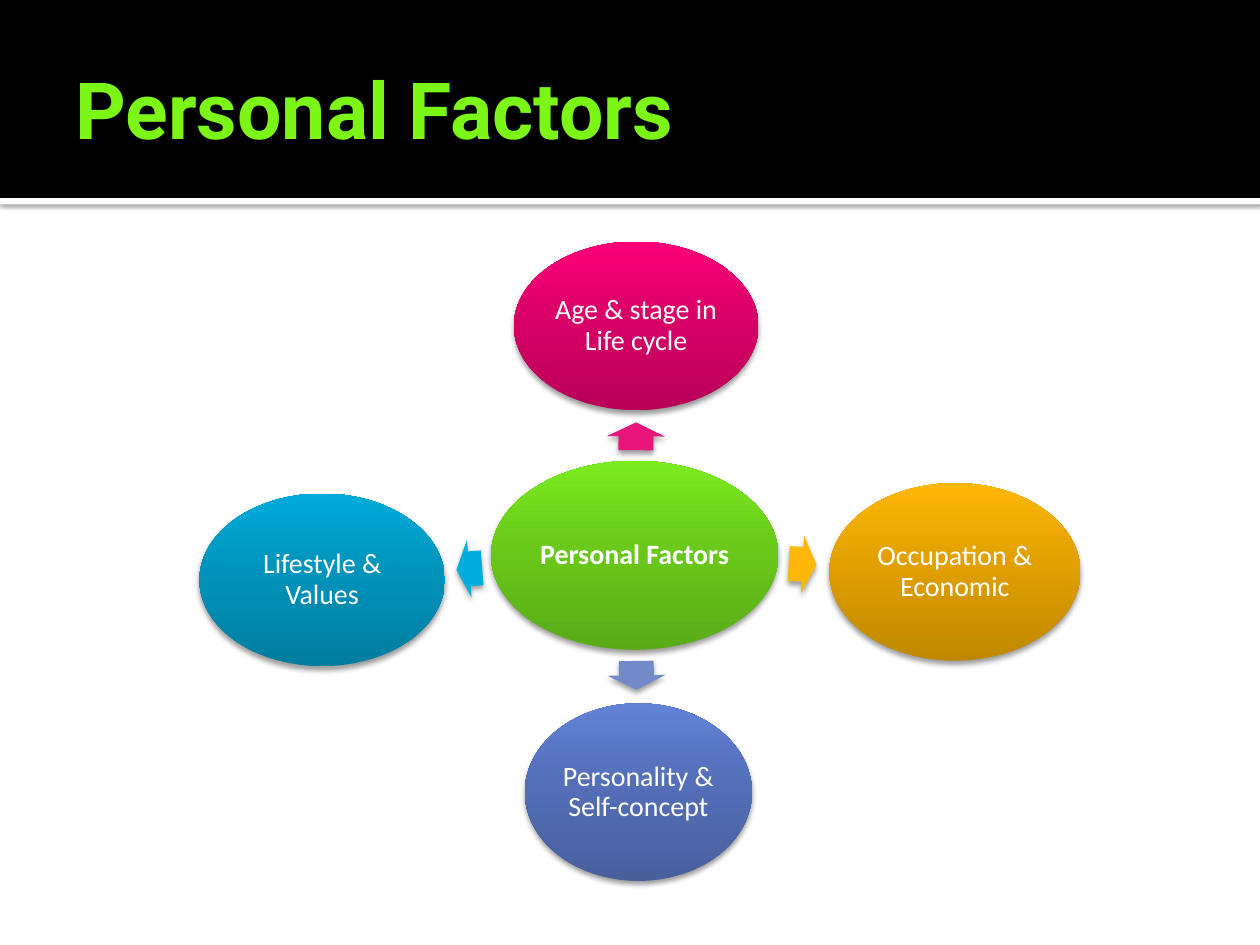
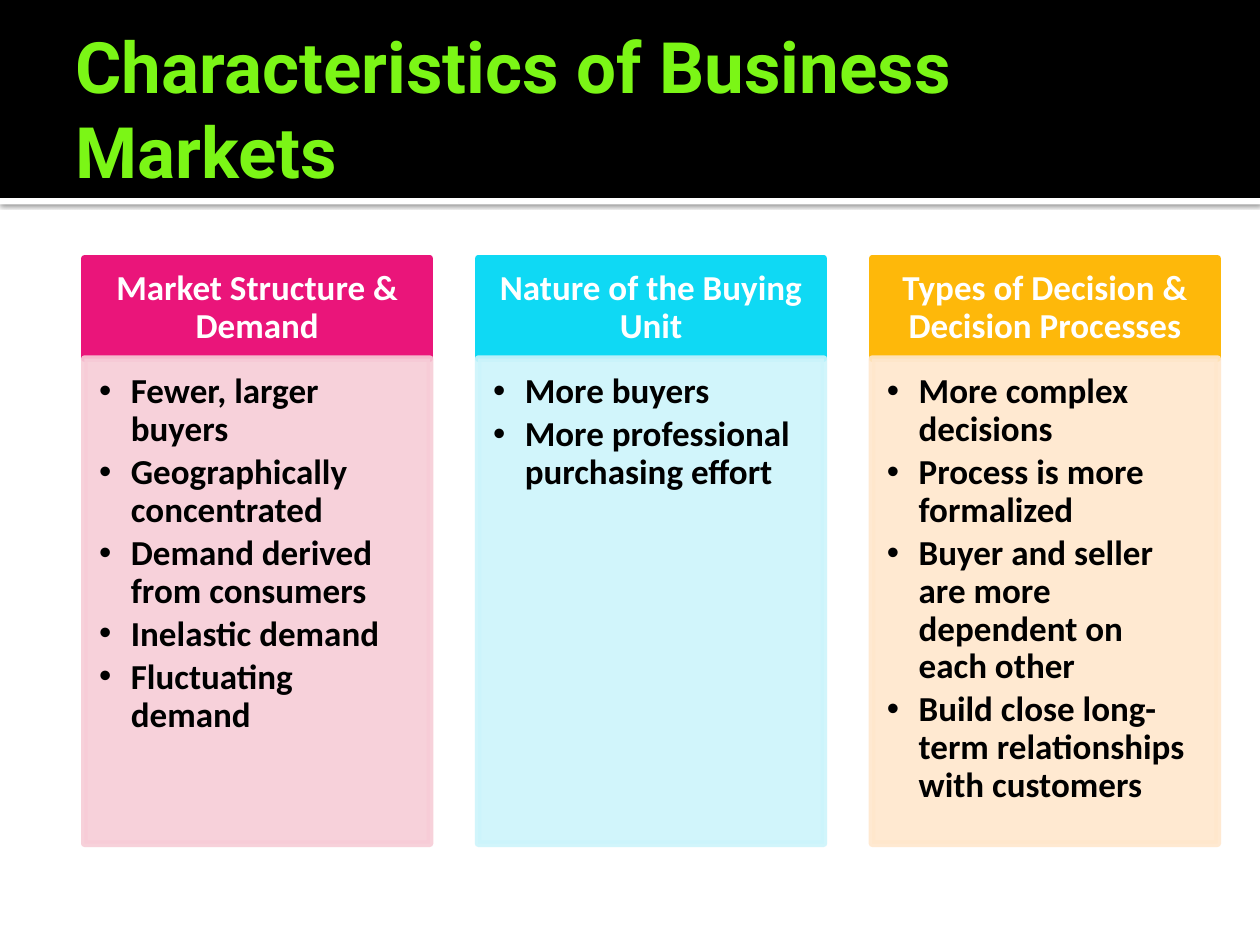
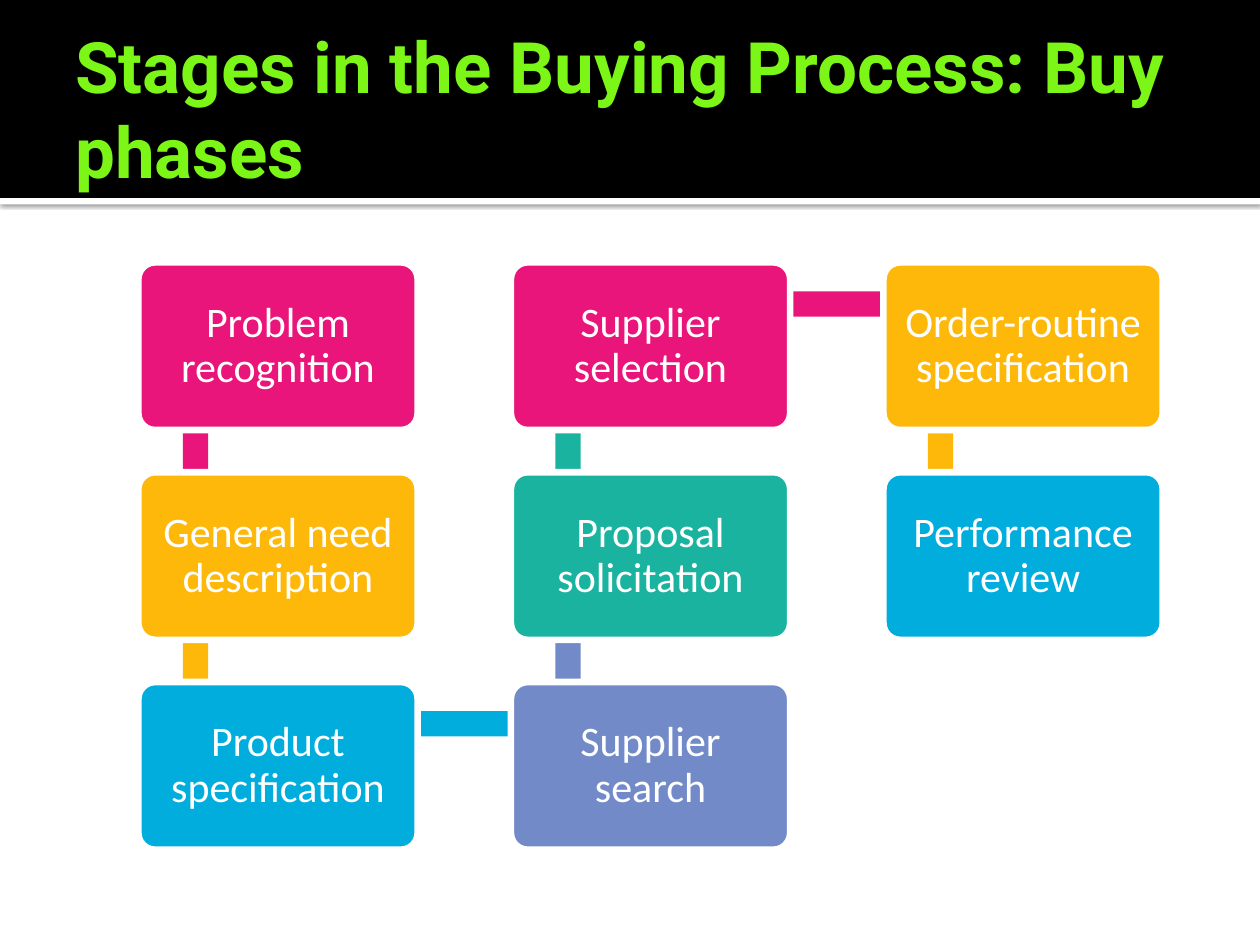
import math
from dataclasses import dataclass

import pptx
import pptx.dml.color
import pptx.enum.shapes
import pptx.enum.text
import pptx.oxml
import pptx.oxml.ns
import pptx.util
from lxml import etree

Cm = pptx.util.Cm
Pt = pptx.util.Pt
qn = pptx.oxml.ns.qn
Kind = pptx.enum.shapes.MSO_SHAPE
Align = pptx.enum.text.PP_ALIGN
Anchor = pptx.enum.text.MSO_ANCHOR


@dataclass(frozen=True)
class Theme:
    black: str = "000000"
    white: str = "FFFFFF"
    lime: str = "7BF616"
    pink: str = "EA157A"
    amber: str = "FEB80A"
    blue: str = "00ADDC"
    indigo: str = "738AC8"
    teal: str = "1AB39F"
    cyan: str = "0FD9F4"
    pale_pink: str = "F7CCD7"
    pale_cyan: str = "CCF4FB"
    pale_amber: str = "FFE7CC"
    # Gradient stops from bottom to top
    green_shades: tuple = ("5AAB17", "6AC91B", "7BEB1F")
    pink_shades: tuple = ("B80057", "D90067", "FD0078")
    amber_shades: tuple = ("BF8800", "E1A000", "FFB807")
    blue_shades: tuple = ("007D9F", "0093BB", "00ABDA")
    indigo_shades: tuple = ("485F9C", "546FB8", "6282D6")
    # Shadows: opacity in percent, blur and distance in points
    band_shadow: tuple = (60, 2.5, 0.8)
    soft_shadow: tuple = (38, 3.1, 2)
    title_font: str = "Roboto"
    body_font: str = "Calibri"
    title_size: float = 45
    long_title_size: float = 40.5
    bubble_size: float = 16
    column_size: float = 20
    card_size: float = 24
    outline: float = 3.78


def rgb(value):
    return pptx.dml.color.RGBColor.from_string(value)


class SlideWriter:
    def __init__(self, deck, theme):
        self.deck = deck
        self.theme = theme
        self.slide = None

    def new_slide(self, title, size):
        """Start a slide with the shared band and title."""
        theme = self.theme
        self.slide = self.deck.slides.add_slide(self.deck.slide_layouts[6])
        self.shape(Kind.RECTANGLE, (0, 3.99, 25.4, 0.13), theme.white,
                   shadow=theme.band_shadow)
        self.shape(Kind.RECTANGLE, (0, 0, 25.4, 3.99), theme.black)
        box = self.slide.shapes.add_textbox(*map(Cm, (1.27, 0.43, 22.86, 3.48)))
        self.text(box, [title], size, theme.lime, bold=True, font=theme.title_font,
                  align=Align.LEFT, insets=(0.25, 0.13, 0.13, 0.13), spacing=1)

    def shape(self, kind, place, fill, line=None, shadow=None, opacity=None,
              rotation=0, adjustments=()):
        shape = self.slide.shapes.add_shape(kind, *map(Cm, place))
        shape.rotation = rotation
        for index, value in enumerate(adjustments):
            shape.adjustments[index] = value
        if isinstance(fill, tuple):
            self.gradient(shape, fill)
        else:
            shape.fill.solid()
            shape.fill.fore_color.rgb = rgb(fill)
        if line:
            shape.line.color.rgb = rgb(line)
            shape.line.width = Pt(self.theme.outline)
        else:
            shape.line.fill.background()
        if opacity:
            for color in shape.element.spPr.iter(qn("a:srgbClr")):
                etree.SubElement(color, qn("a:alpha"), val=str(opacity * 1000))
        shape.shadow.inherit = False
        if shadow:
            self.cast_shadow(shape, *shadow)
        return shape

    def gradient(self, shape, shades):
        shape.fill.gradient()
        shape.fill.gradient_angle = 90
        stops = shape.element.spPr.find(".//" + qn("a:gsLst"))
        stops.clear()
        for position, shade in zip((0, 55, 100), shades):
            stop = etree.SubElement(stops, qn("a:gs"), pos=str(position * 1000))
            etree.SubElement(stop, qn("a:srgbClr"), val=shade)

    def cast_shadow(self, shape, opacity, blur, distance):
        effects = shape.element.spPr.find(qn("a:effectLst"))
        outer = etree.SubElement(
            effects, qn("a:outerShdw"), blurRad=str(int(Pt(blur))),
            dist=str(int(Pt(distance))), dir="5400000", rotWithShape="0")
        color = etree.SubElement(outer, qn("a:srgbClr"), val=self.theme.black)
        etree.SubElement(color, qn("a:alpha"), val=str(opacity * 1000))

    def text(self, box, lines, size, color, bold=False, font=None,
             align=Align.CENTER, anchor=Anchor.MIDDLE, insets=(0.05,) * 4,
             spacing=0.9, bullets=False):
        frame = box.text_frame
        frame.word_wrap = True
        frame.vertical_anchor = anchor
        (frame.margin_left, frame.margin_top,
         frame.margin_right, frame.margin_bottom) = map(Cm, insets)
        for index, line in enumerate(lines):
            para = frame.add_paragraph() if index else frame.paragraphs[0]
            para.alignment = align
            para.line_spacing = spacing
            if bullets:
                self.bullet(para)
            span = para.add_run()
            span.text = line
            span.font.name = font or self.theme.body_font
            span.font.size = Pt(size)
            span.font.bold = bold
            span.font.color.rgb = rgb(color)

    def bullet(self, para):
        para.space_after = Pt(3)
        indent = int(Cm(0.64))
        properties = para._p.get_or_add_pPr()
        properties.set("marL", str(indent))
        properties.set("indent", str(-indent))
        etree.SubElement(properties, qn("a:buFont"), typeface="Arial")
        etree.SubElement(properties, qn("a:buChar"), char="•")

    def bubble(self, label, place, shades, bold=False):
        bubble = self.shape(Kind.OVAL, place, shades, shadow=self.theme.soft_shadow)
        self.text(bubble, [label], self.theme.bubble_size, self.theme.white, bold)

    def arrow(self, place, color, rotation):
        self.shape(Kind.RIGHT_ARROW, place, color, shadow=self.theme.soft_shadow,
                   rotation=rotation, adjustments=(0.6, 0.5))

    def column(self, left, heading, items, color, pale):
        theme = self.theme
        width = 6.97
        header = self.shape(Kind.RECTANGLE, (left, 5.21, width, 2.02), color, line=color)
        self.text(header, [heading], theme.column_size, theme.white, bold=True,
                  insets=(0.4, 0.23, 0.4, 0.23))
        body = self.shape(Kind.RECTANGLE, (left, 7.23, width, 9.78), pale,
                          line=pale, opacity=90)
        self.text(body, items, theme.column_size, theme.black, bold=True,
                  align=Align.LEFT, anchor=Anchor.TOP,
                  insets=(0.3, 0.3, 0.4, 0.43), bullets=True)

    def link(self, start, end, color):
        """Draw a bar from one point to another."""
        thickness = 0.51
        (x1, y1), (x2, y2) = start, end
        length = math.hypot(x2 - x1, y2 - y1)
        angle = math.degrees(math.atan2(y2 - y1, x2 - x1)) % 360
        left, top = (x1 + x2 - length) / 2, (y1 + y2 - thickness) / 2
        self.shape(Kind.RECTANGLE, (left, top, length, thickness), color, rotation=angle)

    def card(self, label, left, top, color):
        card = self.shape(Kind.ROUNDED_RECTANGLE, (left, top, 5.63, 3.38), color,
                          line=self.theme.white, adjustments=(0.1,))
        self.text(card, [label], self.theme.card_size, self.theme.white,
                  insets=(0.25,) * 4)


def personal_factors(writer):
    theme = writer.theme
    writer.new_slide("Personal Factors", theme.title_size)
    writer.bubble("Personal Factors", (9.9, 9.29, 5.79, 3.81), theme.green_shades, bold=True)

    # Each factor: label, bubble place, shades, arrow place, arrow colour, angle
    factors = [
        ("Age & stage in Life cycle", (10.36, 4.87, 4.93, 3.4), theme.pink_shades,
         (12.54, 8.21, 0.56, 1.17), theme.pink, 270.5),
        ("Occupation & Economic", (16.72, 9.74, 5.06, 3.58), theme.amber_shades,
         (15.9, 10.79, 0.56, 1.17), theme.amber, 3),
        ("Lifestyle & Values", (4.02, 9.95, 4.95, 3.48), theme.blue_shades,
         (9.2, 10.88, 0.52, 1.17), theme.blue, 175.5),
        ("Personality & Self-concept", (10.58, 14.18, 4.58, 3.58), theme.indigo_shades,
         (12.54, 13.03, 0.58, 1.17), theme.indigo, 89.1),
    ]
    for label, place, shades, arrow_place, color, angle in factors:
        writer.arrow(arrow_place, color, angle)
        writer.bubble(label, place, shades)


def business_markets(writer):
    theme = writer.theme
    writer.new_slide("Characteristics of Business Markets", theme.long_title_size)
    columns = [
        ("Market Structure & Demand", theme.pink, theme.pale_pink,
         ["Fewer, larger buyers", "Geographically concentrated",
          "Demand derived from consumers", "Inelastic demand", "Fluctuating demand"]),
        ("Nature of the Buying Unit", theme.cyan, theme.pale_cyan,
         ["More buyers", "More professional purchasing effort"]),
        ("Types of Decision & Decision Processes", theme.amber, theme.pale_amber,
         ["More complex decisions", "Process is more formalized",
          "Buyer and seller are more dependent on each other",
          "Build close long-term relationships with customers"]),
    ]
    for index, (heading, color, pale, items) in enumerate(columns):
        writer.column(1.7 + index * 7.94, heading, items, color, pale)


def buying_stages(writer):
    theme = writer.theme
    writer.new_slide("Stages in the Buying Process: Buy phases", theme.long_title_size)
    stages = [
        ("Problem recognition", theme.pink),
        ("General need description", theme.amber),
        ("Product specification", theme.blue),
        ("Supplier search", theme.indigo),
        ("Proposal solicitation", theme.teal),
        ("Supplier selection", theme.pink),
        ("Order-routine specification", theme.amber),
        ("Performance review", theme.blue),
    ]

    # The path runs down one column and up the next
    corners = []
    for index in range(len(stages)):
        column, row = divmod(index, 3)
        if column % 2:
            row = 2 - row
        corners.append((2.79 + column * 7.51, 5.29 + row * 4.23))
    joints = [(left + 1.15, top + 0.84) for left, top in corners]

    for index, (label, color) in enumerate(stages):
        if index + 1 < len(stages):
            writer.link(joints[index], joints[index + 1], color)
        writer.card(label, *corners[index], color)


def main():
    deck = pptx.Presentation()
    deck.slide_width, deck.slide_height = Cm(25.4), Cm(19.05)
    writer = SlideWriter(deck, Theme())
    personal_factors(writer)
    business_markets(writer)
    buying_stages(writer)
    deck.save("out.pptx")


if __name__ == "__main__":
    main()
